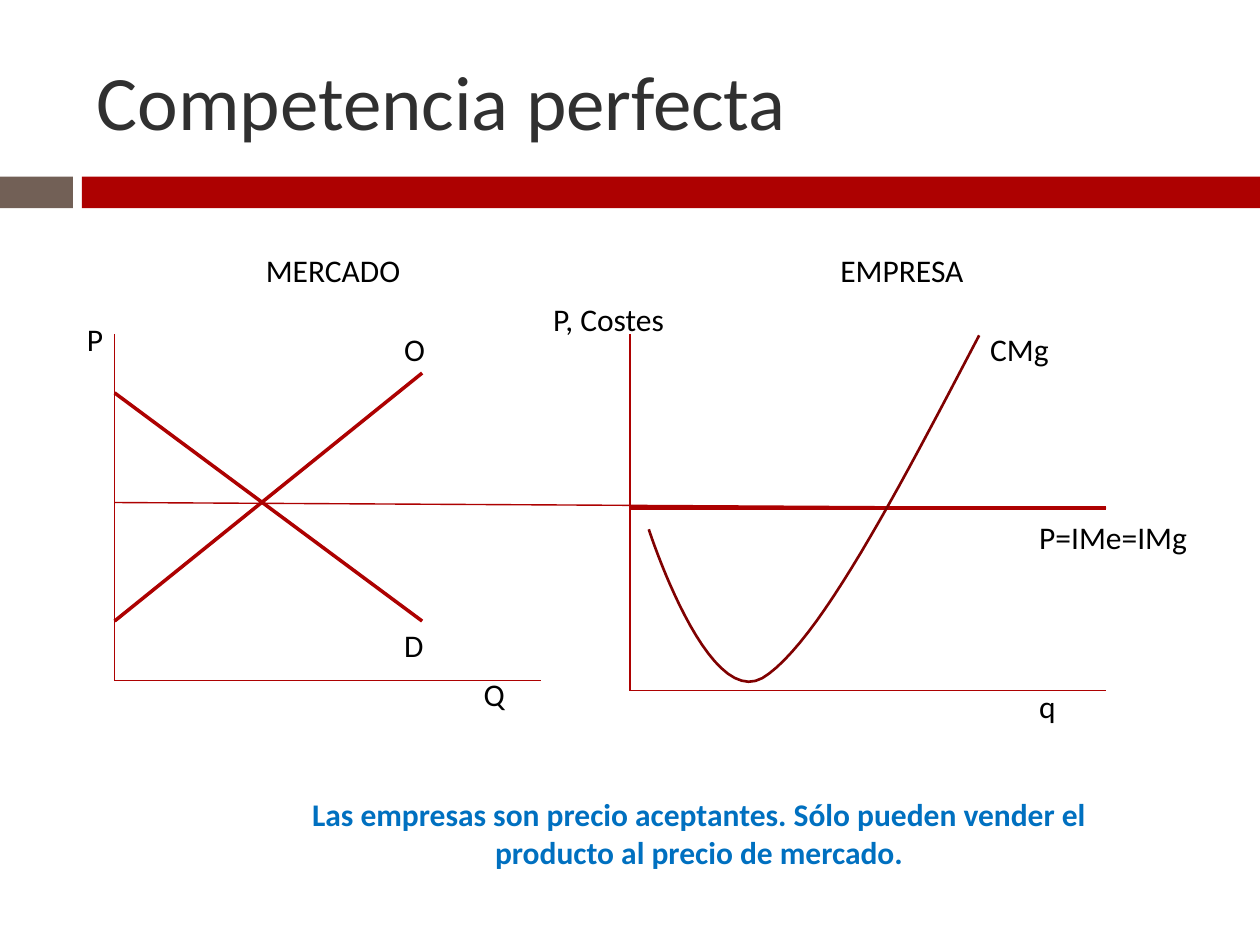
import pptx
import pptx.dml.color
import pptx.enum.shapes
import pptx.enum.text
import pptx.oxml.ns
import pptx.util
from pptx.util import Cm

RED = "AD0101"
DARK_RED = "800101"
BROWN = "726056"
BLACK = "000000"


def paint(color_format, color):
    """Set a fill, line or font colour from a hex string."""
    color_format.rgb = pptx.dml.color.RGBColor.from_string(color)


def add_text(text, left, top, width=3.81, height=1.02, size=18, color=BLACK, bold=False):
    """Add a one-paragraph box, measured in centimetres, and return it."""
    box = slide.shapes.add_textbox(Cm(left), Cm(top), Cm(width), Cm(height))
    box.text_frame.word_wrap = True
    span = box.text_frame.paragraphs[0].add_run()
    span.text = text
    span.font.name = "Calibri"
    span.font.size = pptx.util.Pt(size)
    span.font.bold = bold
    paint(span.font.color, color)
    return box


deck = pptx.Presentation()
deck.slide_width, deck.slide_height = Cm(25.4), Cm(19.05)
slide = deck.slides.add_slide(deck.slide_layouts[6])

# Header band and title
for left, width, color in [(0, 1.47, BROWN), (1.65, 23.75, RED)]:
    band = slide.shapes.add_shape(
        pptx.enum.shapes.MSO_SHAPE.RECTANGLE, Cm(left), Cm(3.56), Cm(width), Cm(0.64))
    band.shadow.inherit = False
    band.fill.solid()
    paint(band.fill.fore_color, color)
    band.line.fill.background()

title = add_text("Competencia perfecta", 1.7, 0.64, 22.66, 2.74, size=44, color="303030")
title.text_frame.vertical_anchor = pptx.enum.text.MSO_ANCHOR.MIDDLE

# Axes, supply, demand and price lines
market_x, firm_x, firm_end = 2.31, 12.7, 22.3
axis_top, market_base, firm_base = 6.73, 13.72, 13.92
curve_end, price_y = 8.51, 10.24
thin, thick = 0.79, 2
lines = [
    (market_x, axis_top, market_x, market_base, thin),
    (market_x, market_base, 10.9, market_base, thin),
    (firm_x, axis_top, firm_x, firm_base, thin),
    (firm_x, firm_base, firm_end, firm_base, thin),
    (market_x, 7.92, curve_end, 12.52, thick),
    (market_x, 12.52, curve_end, 7.52, thick),
    (market_x, 10.13, firm_end, price_y, thin),
    (firm_x, price_y, firm_end, price_y, thick),
]
for x1, y1, x2, y2, weight in lines:
    line = slide.shapes.add_connector(
        pptx.enum.shapes.MSO_CONNECTOR.STRAIGHT, Cm(x1), Cm(y1), Cm(x2), Cm(y2))
    paint(line.line.color, RED)
    line.line.width = pptx.util.Pt(weight)
    properties = line._element.spPr
    properties.append(properties.makeelement(pptx.oxml.ns.qn("a:effectLst"), {}))

# Marginal cost curve: two cubic Bézier arcs joined near the minimum
arcs = [
    [(19.74, 6.76), (18.11, 9.88), (16.48, 13), (15.37, 13.67)],
    [(15.37, 13.67), (14.25, 14.3), (13.08, 10.67), (13.08, 10.67)],
]
steps = 24
points = []
for arc in arcs:
    for step in range(steps + 1):
        t = step / steps
        weights = [(1 - t) ** 3, 3 * t * (1 - t) ** 2, 3 * t ** 2 * (1 - t), t ** 3]
        points.append(tuple(
            Cm(sum(weight * value for weight, value in zip(weights, values)))
            for values in zip(*arc)))
builder = slide.shapes.build_freeform(*points[0])
builder.add_line_segments(points[1:], close=False)
cost_curve = builder.convert_to_shape()
cost_curve.shadow.inherit = False
cost_curve.fill.background()
paint(cost_curve.line.color, DARK_RED)
cost_curve.line.width = pptx.util.Pt(1.5)

# Labels
labels = [
    ("MERCADO", 5.11, 4.93),
    ("EMPRESA", 16.69, 4.93),
    ("P", 1.5, 6.32),
    ("O", 7.9, 6.53),
    ("D", 7.9, 12.5),
    ("Q", 9.5, 13.49),
    ("P, Costes", 10.9, 5.92),
    ("CMg", 19.71, 6.53),
    ("P=IMe=IMg", 20.7, 10.31),
    ("q", 20.7, 13.72),
]
for text, left, top in labels:
    add_text(text, left, top)

conclusion = add_text(
    "Las empresas son precio aceptantes. Sólo pueden vender el producto al precio de mercado.",
    5.89, 15.9, 16.41, 1.8, color="0070C0", bold=True)
conclusion.text_frame.paragraphs[0].alignment = pptx.enum.text.PP_ALIGN.CENTER

deck.save("out.pptx")
